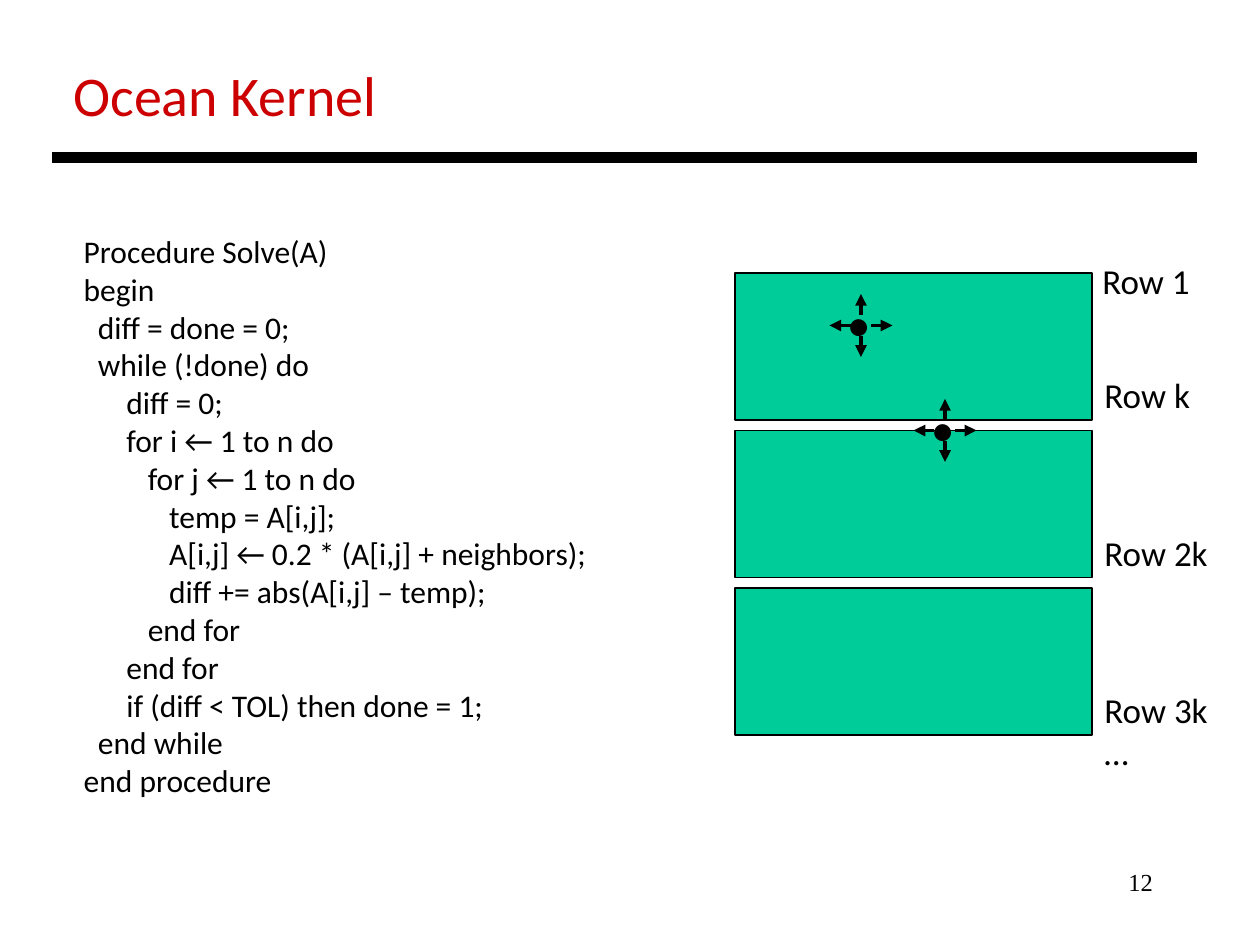
from dataclasses import dataclass

from lxml.etree import SubElement
from pptx import Presentation
from pptx.dml.color import RGBColor
from pptx.enum.shapes import MSO_CONNECTOR, MSO_SHAPE
from pptx.enum.text import MSO_AUTO_SIZE, PP_ALIGN
from pptx.oxml.ns import qn
from pptx.util import Inches, Pt


@dataclass(frozen=True)
class Theme:
    """Colours, fonts and type sizes of the slide."""
    ink: RGBColor = RGBColor(0x00, 0x00, 0x00)
    title: RGBColor = RGBColor(0xCC, 0x00, 0x00)
    band: RGBColor = RGBColor(0x00, 0xCC, 0x99)
    body_font: str = "Calibri"
    number_font: str = "Times New Roman"
    title_size: int = 32
    code_size: int = 18
    label_size: int = 20
    dot_size: int = 80
    number_size: int = 14


THEME = Theme()
COLS, ROWS = 120, 90
BAND_LEFT, BAND_TOP, BAND_WIDTH, BAND_HEIGHT, BAND_PITCH = 70, 26, 34, 14, 15
STENCILS = [(82, 31), (90, 41)]
DIRECTIONS = [(0, -1), (0, 1), (1, 0), (-1, 0)]
INDENT = 4.07
CODE = [
    (0, "Procedure Solve(A)"),
    (0, "begin"),
    (2, "diff = done = 0;"),
    (2, "while (!done) do"),
    (6, "diff = 0;"),
    (6, "for i ← 1 to n do"),
    (9, "for j ← 1 to n do"),
    (12, "temp = A[i,j];"),
    (12, "A[i,j] ← 0.2 * (A[i,j] + neighbors);"),
    (12, "diff += abs(A[i,j] – temp);"),
    (9, "end for"),
    (6, "end for"),
    (6, "if (diff < TOL) then done = 1;"),
    (2, "end while"),
    (0, "end procedure"),
]
LABELS = [
    (103.8, 24.1, 10.8, 5.3, ["Row 1"]),
    (104, 35, 10.7, 5.3, ["Row k"]),
    (104, 50, 12.4, 5.3, ["Row 2k"]),
    (104, 65, 12.4, 9.2, ["Row 3k", "…"]),
]


def grid(*cells):
    """Turn grid counts into slide lengths."""
    return [Inches(cell * 10 / COLS) for cell in cells]


def add_text(s, box, lines, size, color=THEME.ink, font=THEME.body_font,
             align=PP_ALIGN.LEFT, wrap=False):
    """Add a text box of (indent, text) lines."""
    tf = s.shapes.add_textbox(*grid(*box)).text_frame
    tf.word_wrap = wrap
    tf.auto_size = MSO_AUTO_SIZE.NONE if wrap else MSO_AUTO_SIZE.SHAPE_TO_FIT_TEXT
    for i, (indent, text) in enumerate(lines):
        p = tf.add_paragraph() if i else tf.paragraphs[0]
        p.text = text
        p.alignment = align
        p.font.name = font
        p.font.size = Pt(size)
        p.font.color.rgb = color
        if indent:
            p._p.get_or_add_pPr().set("marL", str(Pt(indent * INDENT)))


def add_line(s, start, end, width, arrow=False):
    """Add a straight line, optionally with an arrowhead at its end."""
    sp = s.shapes.add_connector(MSO_CONNECTOR.STRAIGHT, *grid(*start, *end))
    sp.line.color.rgb = THEME.ink
    sp.line.width = Pt(width)
    if arrow:
        SubElement(sp.line._get_or_add_ln(), qn("a:tailEnd"), type="triangle")
    SubElement(sp._element.spPr, qn("a:effectLst"))


def add_band(s, index):
    """Add one block of grid rows."""
    top = BAND_TOP + index * BAND_PITCH
    sp = s.shapes.add_shape(MSO_SHAPE.RECTANGLE,
                            *grid(BAND_LEFT, top, BAND_WIDTH, BAND_HEIGHT))
    sp.shadow.inherit = False
    sp.fill.solid()
    sp.fill.fore_color.rgb = THEME.band
    sp.line.color.rgb = THEME.ink
    sp.line.width = Pt(0.75)


def add_stencil(s, x, y):
    """Add a point with arrows to its four neighbours."""
    add_text(s, (x - 3, y - 13, 5.9, 17.4), [(0, ".")], THEME.dot_size)
    for dx, dy in DIRECTIONS:
        add_line(s, (x + dx, y + dy), (x + 3 * dx, y + 3 * dy), 2.25, arrow=True)


def main():
    """Build and save the slide."""
    prs = Presentation()
    prs.slide_width, prs.slide_height = grid(COLS, ROWS)
    s = prs.slides.add_slide(prs.slide_layouts[6])
    add_text(s, (86, 82, 25, 6), [(0, "12")], THEME.number_size,
             font=THEME.number_font, align=PP_ALIGN.RIGHT, wrap=True)
    add_text(s, (5.8, 5.2, 31.6, 7.7), [(0, "Ocean Kernel")],
             THEME.title_size, THEME.title)
    add_line(s, (5, 15), (114, 15), 6)
    add_text(s, (6.8, 21.5, 51.1, 55.7), CODE, THEME.code_size)
    for index in range(3):
        add_band(s, index)
    for x, y in STENCILS:
        add_stencil(s, x, y)
    for *box, lines in LABELS:
        add_text(s, box, [(0, line) for line in lines], THEME.label_size)
    prs.save("out.pptx")


if __name__ == "__main__":
    main()
